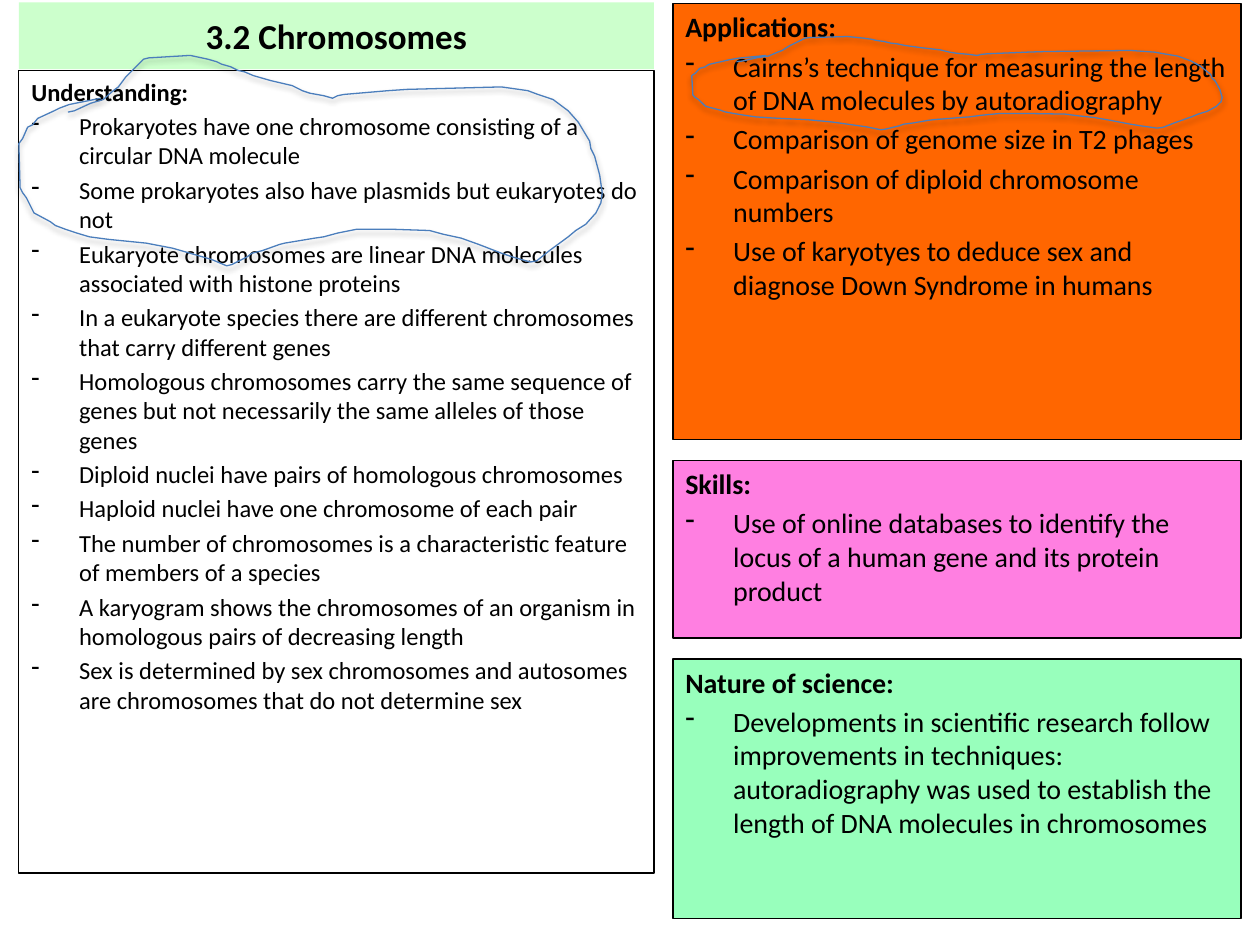
from lxml import etree
from pptx import Presentation
from pptx.dml.color import RGBColor
from pptx.enum.shapes import MSO_SHAPE
from pptx.enum.text import MSO_ANCHOR, PP_ALIGN
from pptx.oxml.ns import qn
from pptx.util import Inches, Pt

RECTANGLE = MSO_SHAPE.RECTANGLE
TOP, MIDDLE = MSO_ANCHOR.TOP, MSO_ANCHOR.MIDDLE
LEFT, CENTER = PP_ALIGN.LEFT, PP_ALIGN.CENTER

TITLE = "3.2 Chromosomes"
UNDERSTANDING = [
    "Prokaryotes have one chromosome consisting of a circular DNA molecule",
    "Some prokaryotes also have plasmids but eukaryotes do not",
    "Eukaryote chromosomes are linear DNA molecules associated with histone proteins",
    "In a eukaryote species there are different chromosomes that carry different genes",
    "Homologous chromosomes carry the same sequence of genes but not necessarily "
    "the same alleles of those genes",
    "Diploid nuclei have pairs of homologous chromosomes",
    "Haploid nuclei have one chromosome of each pair",
    "The number of chromosomes is a characteristic feature of members of a species",
    "A karyogram shows the chromosomes of an organism in homologous pairs of "
    "decreasing length",
    "Sex is determined by sex chromosomes and autosomes are chromosomes that do not "
    "determine sex",
]
APPLICATIONS = [
    "Cairns’s technique for measuring the length of DNA molecules by autoradiography",
    "Comparison of genome size in T2 phages",
    "Comparison of diploid chromosome numbers",
    "Use of karyotyes to deduce sex and diagnose Down Syndrome in humans",
]
SKILLS = [
    "Use of online databases to identify the locus of a human gene and its protein product",
]
NATURE = [
    "Developments in scientific research follow improvements in techniques: "
    "autoradiography was used to establish the length of DNA molecules in chromosomes",
]

THEME = {
    "font": "Calibri", "ink": "000000", "ring": "4B7EBC", "title_fill": "CCFFCC",
    "title_size": 20, "left_size": 14, "right_size": 16, "line": 0.75,
}
LEFT_X, LEFT_W = 0.15, 5.04
RIGHT_X, RIGHT_W, RIGHT_TOP, RIGHT_GAP = 5.34, 4.51, 0.03, 0.165
HANG = 0.38

# heading, points, fill, height
RIGHT_PANELS = [
    ("Applications:", APPLICATIONS, "FF6600", 3.46),
    ("Skills:", SKILLS, "FF7FE1", 1.41),
    ("Nature of science:", NATURE, "98FFBC", 2.06),
]

# One hand-drawn ring on a 463 by 167 grid, stretched over each marked passage
RING_GRID = (463, 167)
RING = [
    (65, 34), (50, 37), (40, 39), (32, 42), (28, 44), (15, 50), (11, 55), (7, 57),
    (3, 66), (0, 70), (1, 105), (3, 109), (6, 113), (12, 125), (25, 132), (29, 135),
    (37, 138), (46, 141), (56, 144), (71, 146), (101, 149), (122, 153), (129, 155),
    (153, 162), (165, 167), (169, 166), (181, 160), (185, 157), (193, 155),
    (207, 150), (211, 149), (235, 145), (242, 144), (253, 141), (268, 138),
    (297, 138), (326, 139), (337, 142), (351, 145), (365, 150), (383, 157),
    (392, 160), (406, 164), (411, 163), (421, 155), (436, 144), (442, 139),
    (450, 134), (458, 125), (462, 117), (463, 109), (461, 95), (457, 80), (454, 74),
    (453, 68), (444, 53), (436, 44), (428, 38), (424, 35), (412, 31), (404, 28),
    (383, 25), (308, 27), (293, 28), (258, 31), (253, 32), (249, 34), (242, 32),
    (231, 30), (225, 28), (217, 24), (200, 20), (186, 16), (179, 13), (174, 12),
    (168, 9), (161, 7), (157, 5), (150, 3), (136, 0), (103, 2), (99, 3), (90, 12),
    (85, 17), (79, 25), (75, 28), (67, 35), (57, 38), (44, 44), (39, 45),
]
RING_BOXES = [(0.15, 0.44, 4.63, 1.67), (5.49, 0.29, 4.21, 0.74)]


def paint(shape, fill, line):
    shape.shadow.inherit = False
    if fill:
        shape.fill.solid()
        shape.fill.fore_color.rgb = RGBColor.from_string(fill)
    else:
        shape.fill.background()
    if line:
        shape.line.color.rgb = RGBColor.from_string(line)
        shape.line.width = Pt(THEME["line"])
    else:
        shape.line.fill.background()


def add_box(slide, box, fill, line, anchor):
    shape = slide.shapes.add_shape(RECTANGLE, *map(Inches, box))
    paint(shape, fill, line)
    frame = shape.text_frame
    frame.word_wrap = True
    frame.vertical_anchor = anchor
    return frame


def write(paragraph, text, size, bold, align=LEFT):
    paragraph.alignment = align
    run = paragraph.add_run()
    run.text = text
    formats = {"name": THEME["font"], "size": Pt(size), "bold": bold}
    for attribute, value in formats.items():
        setattr(run.font, attribute, value)
    run.font.color.rgb = RGBColor.from_string(THEME["ink"])


def add_dash(paragraph):
    """Give the paragraph a hanging indent with a dash bullet."""
    properties = paragraph._p.get_or_add_pPr()
    properties.set("marL", str(Inches(HANG)))
    properties.set("indent", str(-Inches(HANG)))
    etree.SubElement(properties, qn("a:buChar"), char="-")


def add_panel(slide, box, fill, heading, points, size):
    frame = add_box(slide, box, fill, THEME["ink"], TOP)
    write(frame.paragraphs[0], heading, size, True)
    for point in points:
        paragraph = frame.add_paragraph()
        paragraph.space_before = Pt(size * 0.2)
        write(paragraph, point, size, False)
        add_dash(paragraph)


def add_ring(slide, box):
    x, y, width, height = map(Inches, box)
    scale = (width / RING_GRID[0], height / RING_GRID[1])
    builder = slide.shapes.build_freeform(*RING[0], scale=scale)
    builder.add_line_segments(RING[1:], close=False)
    ring = builder.convert_to_shape(x, y)
    paint(ring, None, THEME["ring"])
    effects = ring._element.spPr.find(qn("a:effectLst"))
    shadow = etree.SubElement(
        effects, qn("a:outerShdw"), blurRad=str(Pt(3.1)), dist=str(Pt(1.8)),
        dir="5400000", rotWithShape="0")
    color = etree.SubElement(shadow, qn("a:srgbClr"), val=THEME["ink"])
    etree.SubElement(color, qn("a:alpha"), val="35000")


def main():
    deck = Presentation()
    deck.slide_width, deck.slide_height = Inches(10), Inches(7.5)
    slide = deck.slides.add_slide(deck.slide_layouts[6])

    title = add_box(slide, (LEFT_X, 0.02, LEFT_W, 0.53), THEME["title_fill"], None, MIDDLE)
    write(title.paragraphs[0], TITLE, THEME["title_size"], True, CENTER)
    add_panel(slide, (LEFT_X, 0.56, LEFT_W, 6.37), None, "Understanding:",
              UNDERSTANDING, THEME["left_size"])

    top = RIGHT_TOP
    for heading, points, fill, height in RIGHT_PANELS:
        add_panel(slide, (RIGHT_X, top, RIGHT_W, height), fill, heading, points,
                  THEME["right_size"])
        top += height + RIGHT_GAP

    for box in RING_BOXES:
        add_ring(slide, box)
    deck.save("out.pptx")


if __name__ == "__main__":
    main()
